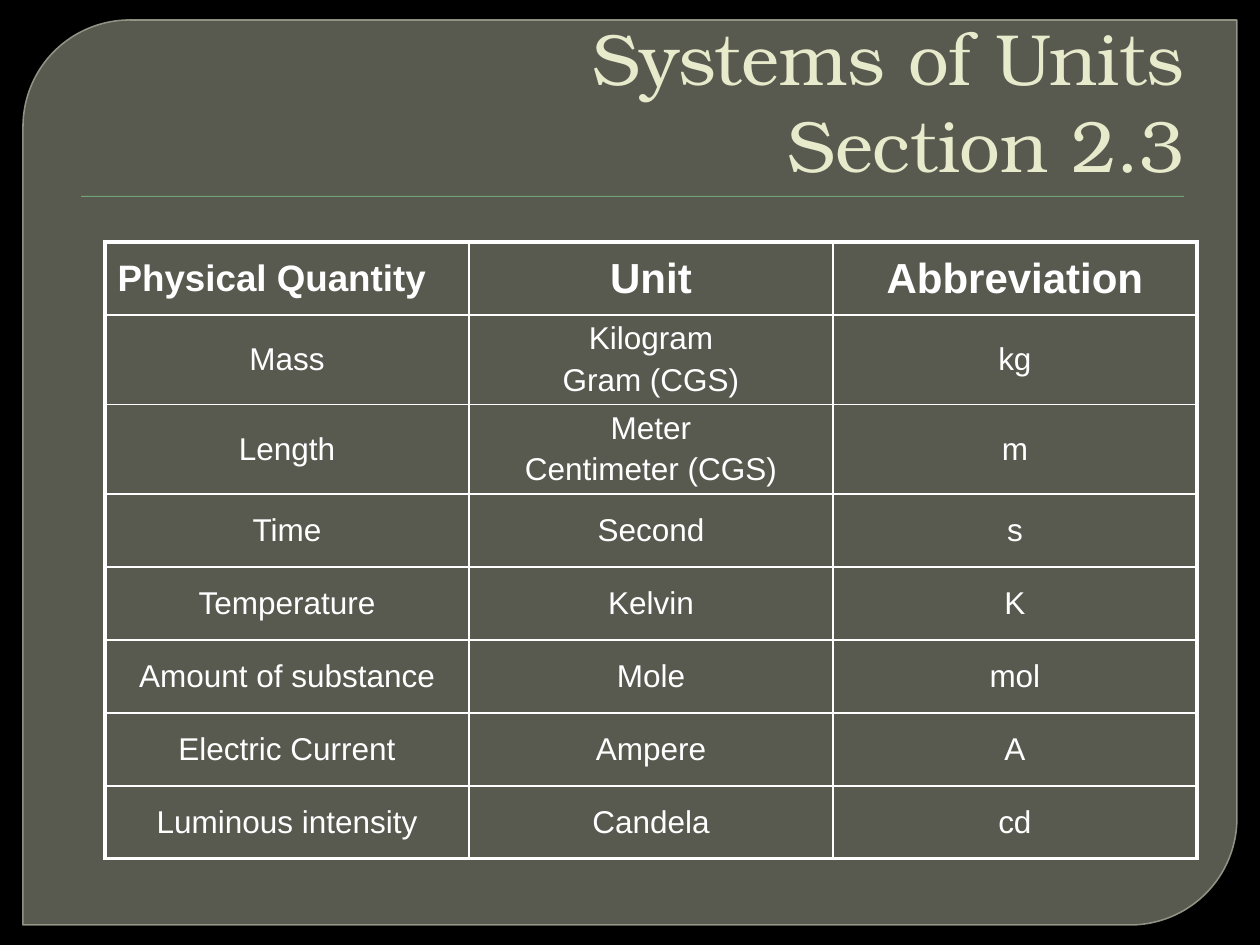
from copy import deepcopy

from lxml.etree import SubElement
from pptx import Presentation
from pptx.dml.color import RGBColor
from pptx.enum.shapes import MSO_SHAPE as Preset
from pptx.enum.text import MSO_ANCHOR as Anchor, MSO_AUTO_SIZE as AutoSize, PP_ALIGN as Align
from pptx.oxml.ns import qn
from pptx.util import Pt

EMU_PER_PX = 914400 // 126
COLORS = {
    "back": "000000",
    "panel": "888B7B",
    "edge": "9DA090",
    "rule": "72A376",
    "title": "E7EACB",
    "white": "FFFFFF",
}
HEADINGS = ["Physical Quantity", "Unit", "Abbreviation"]
UNITS = [
    ["Mass", "Kilogram\nGram (CGS)", "kg"],
    ["Length", "Meter\nCentimeter (CGS)", "m"],
    ["Time", "Second", "s"],
    ["Temperature", "Kelvin", "K"],
    ["Amount of substance", "Mole", "mol"],
    ["Electric Current", "Ampere", "A"],
    ["Luminous intensity", "Candela", "cd"],
]


def px(length):
    return length * EMU_PER_PX


def rgb(name):
    return RGBColor.from_string(COLORS[name])


def add_xml(parent, tag, **attributes):
    return SubElement(parent, qn(tag), {key: str(value) for key, value in attributes.items()})


def set_alpha(fill, percent):
    color = fill._xPr.find(qn("a:solidFill"))[0]
    add_xml(color, "a:alpha", val=percent * 1000)


def write_text(frame, text, font="Arial", size=18, color="white", bold=False,
               align=Align.CENTER, before=0, indent=0):
    frame.word_wrap = True
    for index, line in enumerate(text.split("\n")):
        para = frame.add_paragraph() if index else frame.paragraphs[0]
        para.text = line
        para.alignment = align
        properties = para._p.get_or_add_pPr()
        if indent:
            properties.set("marL", str(px(indent)))
            properties.set("indent", "0")
        spacing = add_xml(properties, "a:spcBef")
        add_xml(spacing, "a:spcPct", val=before * 1000)
        for span in para.runs:
            span.font.name = font
            span.font.size = Pt(size)
            span.font.bold = bold
            span.font.color.rgb = rgb(color)
        for line_break in para._p.findall(qn("a:br")):
            line_break.append(deepcopy(para.runs[0]._r.rPr))


class SlideBuilder:
    heading_sizes = [21, 24, 24]
    outer_width = 2.25
    inner_width = 1

    def __init__(self, page):
        self.page = page
        page.background.fill.solid()
        page.background.fill.fore_color.rgb = rgb("back")

    def shape(self, preset, left, top, width, height, color):
        box = self.page.shapes.add_shape(preset, px(left), px(top), px(width), px(height))
        box.shadow.inherit = False
        box.fill.solid()
        box.fill.fore_color.rgb = rgb(color)
        box.line.fill.background()
        return box

    def panel(self, left, top, width, height):
        box = self.shape(Preset.ROUND_2_DIAG_RECTANGLE, left, top, width, height, "panel")
        box.adjustments[0] = 0.118
        box.adjustments[1] = 0
        set_alpha(box.fill, 65)
        box.line.color.rgb = rgb("edge")
        box.line.width = Pt(0.87)
        set_alpha(box.line.fill, 88)

    def rule(self, left, top, width, height):
        box = self.shape(Preset.RECTANGLE, left, top, width, height, "rule")
        effects = box._element.spPr.find(qn("a:effectLst"))
        shadow = add_xml(effects, "a:outerShdw", blurRad=Pt(1), dist=Pt(1), dir=90 * 60000)
        color = add_xml(shadow, "a:srgbClr", val=COLORS["back"])
        add_xml(color, "a:alpha", val=75000)

    def title(self, text, left, top, width, height):
        box = self.page.shapes.title
        box.left, box.top, box.width, box.height = map(px, (left, top, width, height))
        self.page.shapes._spTree.append(box._element)
        frame = box.text_frame
        frame.auto_size = AutoSize.NONE
        frame.vertical_anchor = Anchor.BOTTOM
        write_text(frame, text, font="TeX Gyre Bonum", size=41.4, color="title",
                   align=Align.RIGHT, indent=8)

    def borders(self, cell, outer_sides):
        properties = cell._tc.get_or_add_tcPr()
        for index, side in enumerate("LRTB"):
            width = self.outer_width if side in outer_sides else self.inner_width
            line = add_xml(properties, f"a:ln{side}", w=Pt(width))
            fill = add_xml(line, "a:solidFill")
            add_xml(fill, "a:srgbClr", val=COLORS["white"])
            properties.insert(index, line)

    def table(self, rows, left, top, column_width, row_height):
        row_count, column_count = len(rows), len(rows[0])
        frame = self.page.shapes.add_table(
            row_count, column_count, px(left), px(top),
            px(column_width * column_count), px(row_height * row_count))
        table = frame.table
        table.first_row = False
        table.horz_banding = False
        for r, row in enumerate(rows):
            for c, text in enumerate(row):
                cell = table.cell(r, c)
                cell.fill.background()
                cell.vertical_anchor = Anchor.MIDDLE
                heading = r == 0
                write_text(cell.text_frame, text, bold=heading, before=20,
                           size=self.heading_sizes[c] if heading else 18,
                           align=Align.LEFT if heading and c == 0 else Align.CENTER)
                edges = {"L": c == 0, "R": c == column_count - 1,
                         "T": r == 0, "B": r == row_count - 1}
                self.borders(cell, [side for side, outer in edges.items() if outer])


def main():
    deck = Presentation()
    deck.slide_width, deck.slide_height = px(1260), px(945)
    builder = SlideBuilder(deck.slides.add_slide(deck.slide_layouts[5]))
    builder.panel(23, 20, 1214, 905)
    builder.rule(81, 196, 1103, 1)
    builder.title("Systems of Units\vSection 2.3", 63, 35, 1134, 158)
    builder.table([HEADINGS] + UNITS, 105, 242, 364, 73)
    deck.save("out.pptx")


if __name__ == "__main__":
    main()
